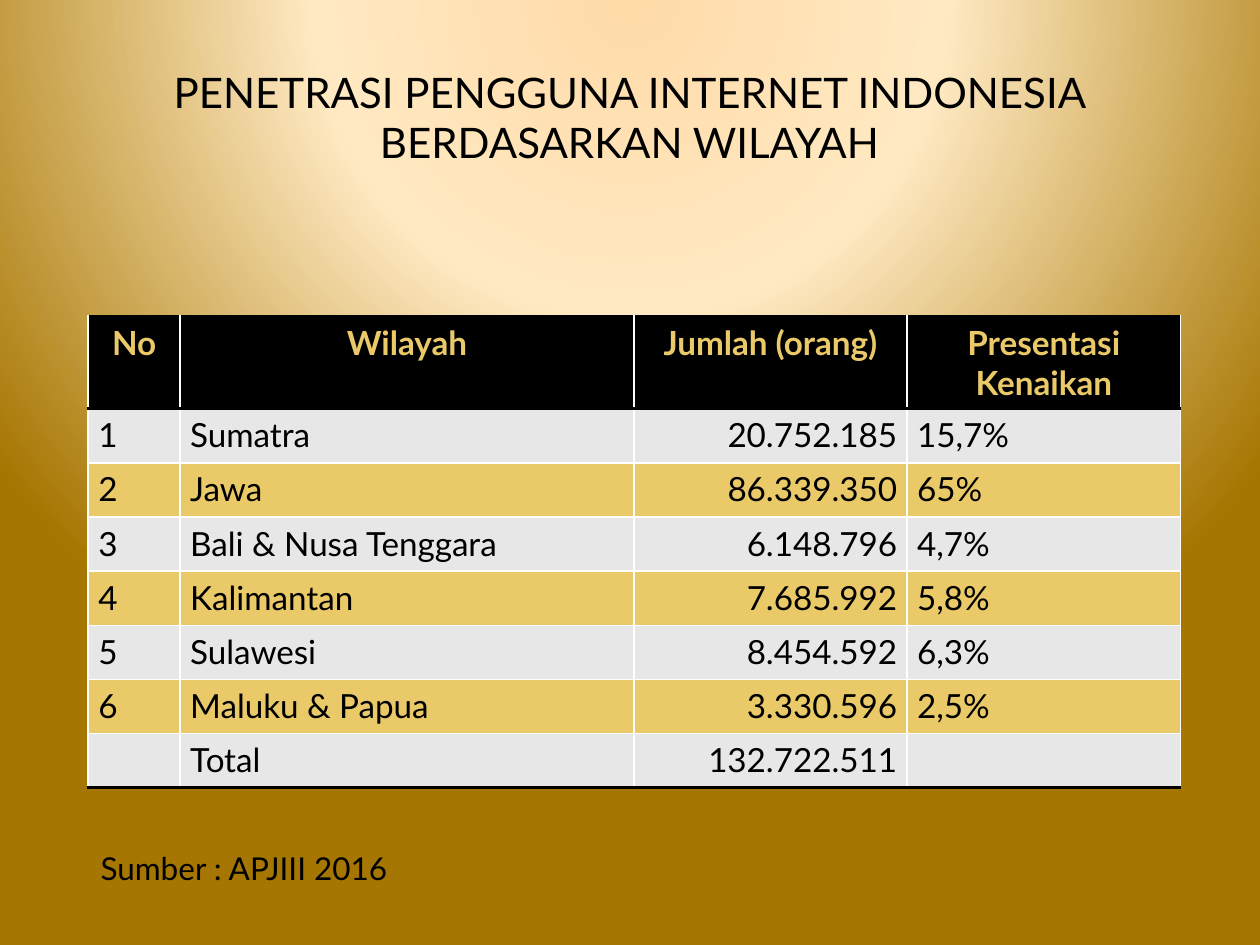
from pptx import Presentation
from pptx.dml.color import RGBColor
from pptx.enum.text import MSO_ANCHOR, PP_ALIGN
from pptx.oxml import parse_xml
from pptx.oxml.ns import nsdecls
from pptx.util import Inches, Pt

LEFT, CENTER, RIGHT = PP_ALIGN.LEFT, PP_ALIGN.CENTER, PP_ALIGN.RIGHT
MIDDLE = MSO_ANCHOR.MIDDLE
BLACK = RGBColor(0x00, 0x00, 0x00)
GOLD = RGBColor(0xEA, 0xC9, 0x68)
GREY = RGBColor(0xE7, 0xE7, 0xE7)
GLOW = RGBColor(0xFF, 0xDB, 0xA9)
CREAM = RGBColor(0xFF, 0xE9, 0xC2)
BRONZE = RGBColor(0xA6, 0x76, 0x02)
FONT = "Lato"

HEADERS = ["No", "Wilayah", "Jumlah (orang)", "Presentasi Kenaikan"]
REGIONS = [
    ["1", "Sumatra", "20.752.185", "15,7%"],
    ["2", "Jawa", "86.339.350", "65%"],
    ["3", "Bali & Nusa Tenggara", "6.148.796", "4,7%"],
    ["4", "Kalimantan", "7.685.992", "5,8%"],
    ["5", "Sulawesi", "8.454.592", "6,3%"],
    ["6", "Maluku & Papua", "3.330.596", "2,5%"],
    ["", "Total", "132.722.511", ""],
]
COLUMN_WIDTHS = [0.73, 3.6, 2.17, 2.17]
COLUMN_ALIGNS = [LEFT, LEFT, RIGHT, LEFT]
HEADER_HEIGHT, ROW_HEIGHT = 0.73, 0.43


def write(para, text, size, color, align, bold=False):
    para.alignment = align
    para.font.size = Pt(size)
    if text:
        span = para.add_run()
        span.text = text
        span.font.name = FONT
        span.font.size = Pt(size)
        span.font.bold = bold
        span.font.color.rgb = color


def rule(cell, *sides):
    props = cell._tc.get_or_add_tcPr()
    for position, side in enumerate(sides):
        props.insert(position, parse_xml(
            f'<a:{side} {nsdecls("a")} w="{Pt(2)}"><a:solidFill>'
            f'<a:srgbClr val="{BLACK}"/></a:solidFill></a:{side}>'))


deck = Presentation()
deck.slide_width, deck.slide_height = Inches(10), Inches(7.5)
page = deck.slides.add_slide(deck.slide_layouts[6])

stops = "".join(
    f'<a:gs pos="{share * 1000}"><a:srgbClr val="{color}"/></a:gs>'
    for share, color in [(0, GLOW), (40, CREAM), (100, BRONZE)])
page.background.fill.solid()
backdrop = page.background._cSld.bg.bgPr
backdrop.replace(backdrop[0], parse_xml(
    f'<a:gradFill {nsdecls("a")} rotWithShape="1"><a:gsLst>{stops}</a:gsLst>'
    '<a:path path="circle"><a:fillToRect l="50000" t="-80000" r="50000" b="180000"/>'
    '</a:path></a:gradFill>'))

title = page.shapes.add_textbox(Inches(0.62), Inches(0.3), Inches(8.75), Inches(1.25))
title.text_frame.word_wrap = True
title.text_frame.vertical_anchor = MIDDLE
write(title.text_frame.paragraphs[0],
      "PENETRASI PENGGUNA INTERNET INDONESIA BERDASARKAN WILAYAH", 24, BLACK, CENTER)

table_height = HEADER_HEIGHT + ROW_HEIGHT * len(REGIONS)
table = page.shapes.add_table(
    len(REGIONS) + 1, len(HEADERS), Inches(0.7), Inches(2.51),
    Inches(sum(COLUMN_WIDTHS)), Inches(table_height)).table
for column, width in zip(table.columns, COLUMN_WIDTHS):
    column.width = Inches(width)

for r, values in enumerate([HEADERS] + REGIONS):
    is_header = r == 0
    table.rows[r].height = Inches(HEADER_HEIGHT if is_header else ROW_HEIGHT)
    for c, value in enumerate(values):
        cell = table.cell(r, c)
        cell.margin_left = cell.margin_right = Inches(0.08)
        cell.margin_top = cell.margin_bottom = Inches(0.05)
        cell.fill.solid()
        cell.fill.fore_color.rgb = BLACK if is_header else GREY if r % 2 else GOLD
        write(cell.text_frame.paragraphs[0], value, 19, GOLD if is_header else BLACK,
              CENTER if is_header else COLUMN_ALIGNS[c], is_header)
        if is_header:
            rule(cell, "lnT", "lnB")
        elif r == len(REGIONS):
            rule(cell, "lnB")

source = page.shapes.add_textbox(Inches(0.7), Inches(6.69), Inches(2.54), Inches(0.4))
source.text_frame.word_wrap = False
write(source.text_frame.paragraphs[0], "Sumber : APJIII 2016", 18, BLACK, LEFT)

deck.save("out.pptx")
